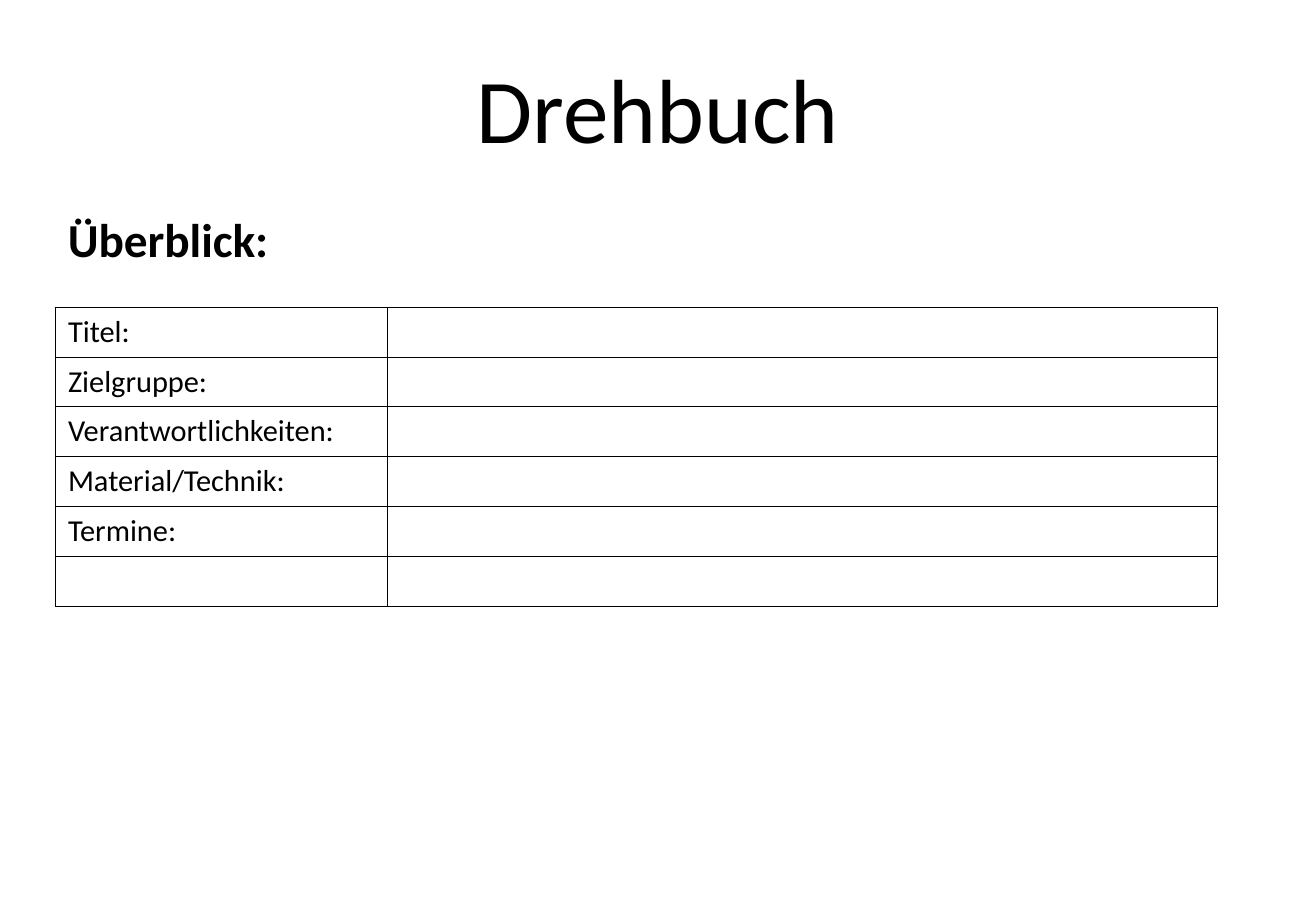
from lxml import etree
from pptx import Presentation
from pptx.dml.color import RGBColor
from pptx.enum.text import MSO_ANCHOR, MSO_AUTO_SIZE, PP_ALIGN
from pptx.oxml.ns import qn
from pptx.util import Inches, Pt

BOTTOM = MSO_ANCHOR.BOTTOM
CENTER, LEFT = PP_ALIGN.CENTER, PP_ALIGN.LEFT
NO_AUTOFIT, FIT_SHAPE = MSO_AUTO_SIZE.NONE, MSO_AUTO_SIZE.SHAPE_TO_FIT_TEXT
TITLE_ONLY = 5

LABELS = ["Titel:", "Zielgruppe:", "Verantwortlichkeiten:",
          "Material/Technik:", "Termine:", ""]


def color(hex_value):
    return RGBColor.from_string(hex_value)


class ScriptSlide:
    font_name = "Calibri"
    ink = "000000"
    paper = "FFFFFF"
    thin, thick = 0.5, 1

    def __init__(self, presentation):
        self.slide = presentation.slides.add_slide(
            presentation.slide_layouts[TITLE_ONLY])

    def format_paragraph(self, paragraph, size, bold=False, alignment=LEFT):
        paragraph.alignment = alignment
        paragraph.font.name = self.font_name
        paragraph.font.size = Pt(size)
        paragraph.font.bold = bold
        paragraph.font.color.rgb = color(self.ink)

    def add_title(self, text, left, top, width, height):
        title = self.slide.shapes.title
        title.left, title.top = Inches(left), Inches(top)
        title.width, title.height = Inches(width), Inches(height)
        frame = title.text_frame
        frame.text = text
        frame.vertical_anchor = BOTTOM
        frame.auto_size = NO_AUTOFIT
        paragraph = frame.paragraphs[0]
        paragraph.line_spacing = 0.9
        self.format_paragraph(paragraph, 54, alignment=CENTER)

    def add_heading(self, text, left, top, width, height):
        heading = self.slide.shapes.add_textbox(
            Inches(left), Inches(top), Inches(width), Inches(height))
        frame = heading.text_frame
        frame.text = text
        frame.word_wrap = False
        frame.auto_size = FIT_SHAPE
        self.format_paragraph(frame.paragraphs[0], 28, bold=True)

    def set_borders(self, cell, left, right):
        """Line all four sides; left and right are widths in points."""
        properties = cell._tc.get_or_add_tcPr()
        widths = {"a:lnL": left, "a:lnR": right,
                  "a:lnT": self.thin, "a:lnB": self.thin}
        for index, (tag, width) in enumerate(widths.items()):
            line = etree.Element(qn(tag), w=str(Pt(width)))
            fill = etree.SubElement(line, qn("a:solidFill"))
            etree.SubElement(fill, qn("a:srgbClr"), val=self.ink)
            properties.insert(index, line)

    def add_form(self, labels, left, top, column_widths, row_height):
        """Add a two-column table with labels beside empty fields."""
        table = self.slide.shapes.add_table(
            len(labels), len(column_widths), Inches(left), Inches(top),
            Inches(sum(column_widths)),
            Inches(row_height * len(labels))).table
        table.first_row = table.horz_banding = False
        for column, width in zip(table.columns, column_widths):
            column.width = Inches(width)
        for row, label in zip(table.rows, labels):
            row.height = Inches(row_height)
            label_cell, field_cell = row.cells
            label_cell.text = label
            for cell in (label_cell, field_cell):
                cell.fill.solid()
                cell.fill.fore_color.rgb = color(self.paper)
                self.format_paragraph(cell.text_frame.paragraphs[0], 18)
            self.set_borders(label_cell, self.thin, self.thick)
            self.set_borders(field_cell, self.thick, self.thin)


def main():
    presentation = Presentation()
    presentation.slide_width = Inches(10.83)
    presentation.slide_height = Inches(7.5)
    script = ScriptSlide(presentation)
    script.add_title("Drehbuch", 0.81, 0.4, 9.21, 0.99)
    script.add_form(LABELS, 0.46, 2.53, [2.73, 6.83], 0.41)
    script.add_heading("Überblick:", 0.46, 1.68, 1.87, 0.57)
    presentation.save("out.pptx")


if __name__ == "__main__":
    main()
